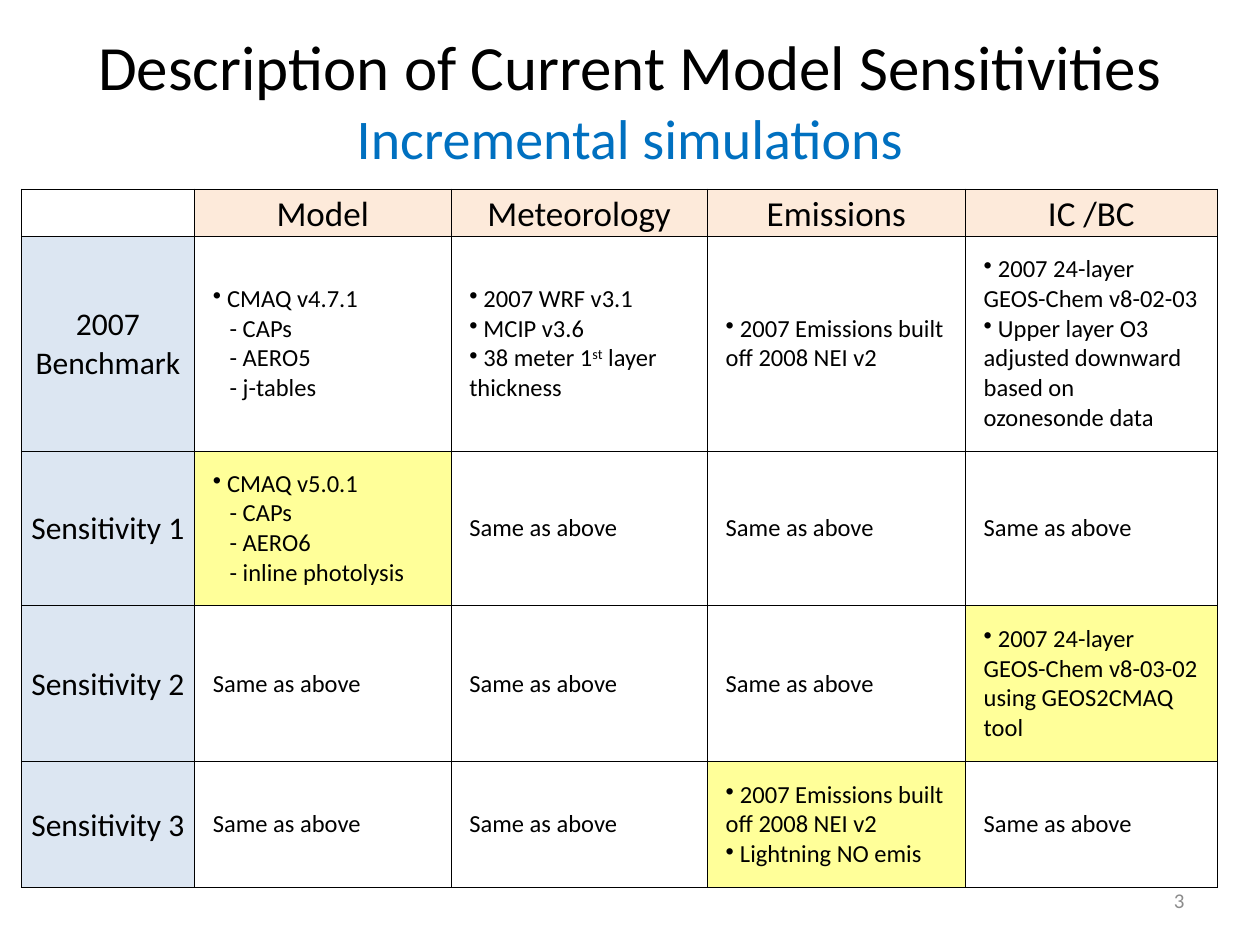
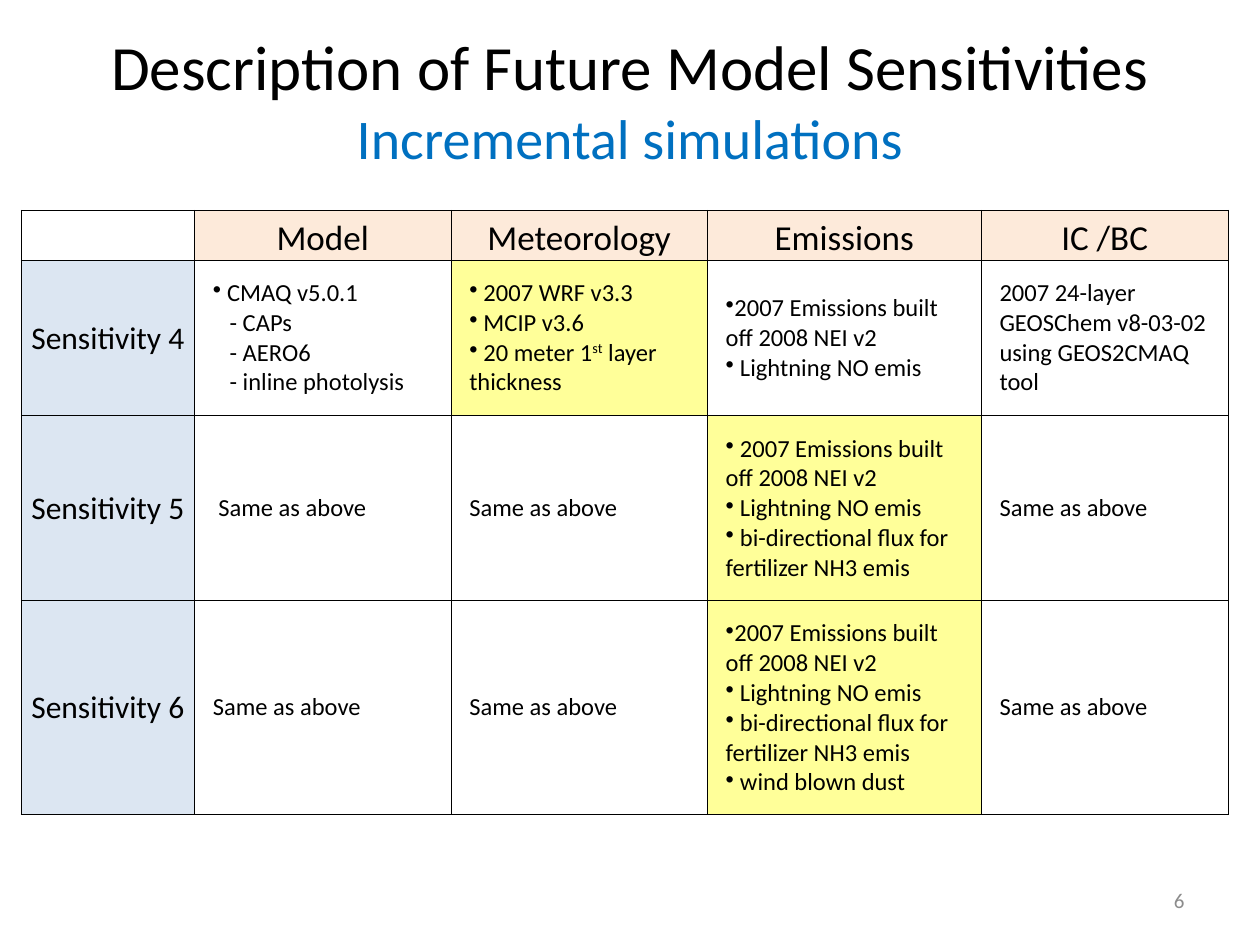
import lxml.etree
import pptx
import pptx.dml.color
import pptx.enum.text
import pptx.oxml.ns
import pptx.util

Cm, Pt = pptx.util.Cm, pptx.util.Pt
Align = pptx.enum.text.PP_ALIGN
Anchor = pptx.enum.text.MSO_ANCHOR
qn = pptx.oxml.ns.qn

# Content: "•" starts a bullet, "-" a sub-item, "^" wraps a superscript
HEADS = ["", "Model", "Meteorology", "Emissions", "IC /BC"]
SAME = ["Same as above"]
CMAQ = ["• CMAQ v5.0.1", "- CAPs", "- AERO6", "- inline photolysis"]
BUILT = "2007 Emissions built off 2008 NEI v2"
NOX = "• Lightning NO emis"
FLUX = "• bi-directional flux for fertilizer NH3 emis"
SUB = "Incremental simulations"

SLIDES = [
    dict(
        title="Description of Current Model Sensitivities",
        page="3", deep=3.18, top=3.81,
        cols=[3.49, 5.17, 5.17, 5.2, 5.08],
        high=[0.95, 4.33, 3.12, 3.14, 2.54],
        marks={(2, 1), (3, 4), (4, 3)},
        rows=[
            ("2007 Benchmark",
             ["• CMAQ v4.7.1", "- CAPs", "- AERO5", "- j-tables"],
             ["• 2007 WRF v3.1", "• MCIP v3.6",
              "• 38 meter 1^st^ layer thickness"],
             ["• " + BUILT],
             ["• 2007 24-layer GEOS-Chem v8-02-03",
              "• Upper layer O3 adjusted downward based on ozonesonde data"]),
            ("Sensitivity 1", CMAQ, SAME, SAME, SAME),
            ("Sensitivity 2", SAME, SAME, SAME,
             ["• 2007 24-layer GEOS-Chem v8-03-02 using GEOS2CMAQ tool"]),
            ("Sensitivity 3", SAME, SAME, ["• " + BUILT, NOX], SAME),
        ],
    ),
    dict(
        title="Description of Future Model Sensitivities",
        page="6", deep=4.7, top=4.24,
        cols=[3.49, 5.17, 5.17, 5.52, 4.98],
        high=[1, 3.14, 3.73, 4.3],
        marks={(1, 2), (2, 3), (3, 3)},
        rows=[
            ("Sensitivity 4", CMAQ,
             ["• 2007 WRF v3.3", "• MCIP v3.6",
              "• 20 meter 1^st^ layer thickness"],
             ["•" + BUILT, NOX],
             ["2007 24-layer GEOSChem v8-03-02 using GEOS2CMAQ tool"]),
            ("Sensitivity 5", ["\u00a0Same as above".replace("\u00a0", " ")],
             SAME, ["• " + BUILT, NOX, FLUX], SAME),
            ("Sensitivity 6", SAME, SAME,
             ["•" + BUILT, NOX, FLUX, "• wind blown dust"], SAME),
        ],
    ),
]


# Theme: type sizes, colours and cell formats
class Theme:
    face = "Calibri"
    ink, blue, grey = "000000", "0070C0", "8C8C8C"
    peach, pale, gold = "FDEADA", "DCE6F2", "FFFF99"
    title, sub, head, name, body, page = 36, 32, 20, 18, 14, 12
    line = Pt(0.5)
    dent = Cm(0.34)
    left = Cm(0.43)
    tight = dict(margin_left=Cm(0.03), margin_right=Cm(0.03),
                 margin_top=Cm(0.03), margin_bottom=0)
    roomy = dict(margin_left=Cm(0.37), margin_right=Cm(0.37),
                 margin_top=Cm(0.36), margin_bottom=Cm(0.36))


def put(item, **vals):
    for key, val in vals.items():
        setattr(item, key, val)


def tint(code):
    return pptx.dml.color.RGBColor.from_string(code)


def write(para, text, size, ink=Theme.ink, align=Align.LEFT):
    """Fill a paragraph; every second part between ^ is raised."""
    para.alignment = align
    for num, part in enumerate(text.split("^")):
        run = para.add_run()
        run.text = part
        put(run.font, name=Theme.face, size=Pt(size), bold=False)
        run.font.color.rgb = tint(ink)
        if num % 2:
            run.font._element.set("baseline", "30000")


def listing(frame, lines):
    """Write body lines with bullets and indents."""
    for num, text in enumerate(lines):
        para = frame.paragraphs[0] if num == 0 else frame.add_paragraph()
        prop = para._p.get_or_add_pPr()
        prop.set("marL", str(Theme.dent if text[0] == "-" else 0))
        prop.set("indent", "0")
        if text[0] == "•":
            lxml.etree.SubElement(prop, qn("a:buChar"), char="•")
            text = text[1:]
        write(para, text, Theme.body)


def border(cell):
    prop = cell._tc.get_or_add_tcPr()
    for side in ("lnL", "lnR", "lnT", "lnB"):
        line = lxml.etree.SubElement(prop, qn("a:" + side), w=str(Theme.line))
        fill = lxml.etree.SubElement(line, qn("a:solidFill"))
        lxml.etree.SubElement(fill, qn("a:srgbClr"), val=Theme.ink)


def paint(cell, code):
    border(cell)
    if code:
        cell.fill.solid()
        cell.fill.fore_color.rgb = tint(code)
    else:
        cell.fill.background()


def heading(slide, data):
    box = slide.shapes.title
    put(box, left=0, top=Cm(0.43), width=Cm(25.4), height=Cm(data["deep"]))
    frame = box.text_frame
    put(frame, vertical_anchor=Anchor.TOP, word_wrap=True,
        auto_size=pptx.enum.text.MSO_AUTO_SIZE.NONE)
    write(frame.paragraphs[0], data["title"], Theme.title, align=Align.CENTER)
    write(frame.add_paragraph(), SUB, Theme.sub, Theme.blue, Align.CENTER)


def footer(slide, page):
    box = slide.shapes.add_textbox(Cm(18.2), Cm(17.65), Cm(5.93), Cm(1.01))
    put(box.text_frame, vertical_anchor=Anchor.MIDDLE, word_wrap=True)
    write(box.text_frame.paragraphs[0], page, Theme.page, Theme.grey,
          Align.RIGHT)


def grid(slide, data):
    cols, high = data["cols"], data["high"]
    table = slide.shapes.add_table(
        len(high), len(cols), Theme.left, Cm(data["top"]),
        Cm(sum(cols)), Cm(sum(high))).table
    put(table, first_row=False, horz_banding=False)
    for col, size in zip(table.columns, cols):
        col.width = Cm(size)
    for row, size in zip(table.rows, high):
        row.height = Cm(size)

    for y, row in enumerate([HEADS] + data["rows"]):
        for x, text in enumerate(row):
            cell = table.cell(y, x)
            label = y == 0 or x == 0
            put(cell, vertical_anchor=Anchor.MIDDLE if y else Anchor.BOTTOM,
                **(Theme.tight if label else Theme.roomy))
            if label:
                code = Theme.pale if y else Theme.peach
                paint(cell, code if text else None)
                write(cell.text_frame.paragraphs[0], text,
                      Theme.name if y else Theme.head, align=Align.CENTER)
            else:
                paint(cell, Theme.gold if (y, x) in data["marks"] else None)
                listing(cell.text_frame, text)


def main():
    deck = pptx.Presentation()
    put(deck, slide_width=Cm(25.4), slide_height=Cm(19.05))
    for data in SLIDES:
        slide = deck.slides.add_slide(deck.slide_layouts[5])
        heading(slide, data)
        footer(slide, data["page"])
        grid(slide, data)
    deck.save("out.pptx")


if __name__ == "__main__":
    main()
